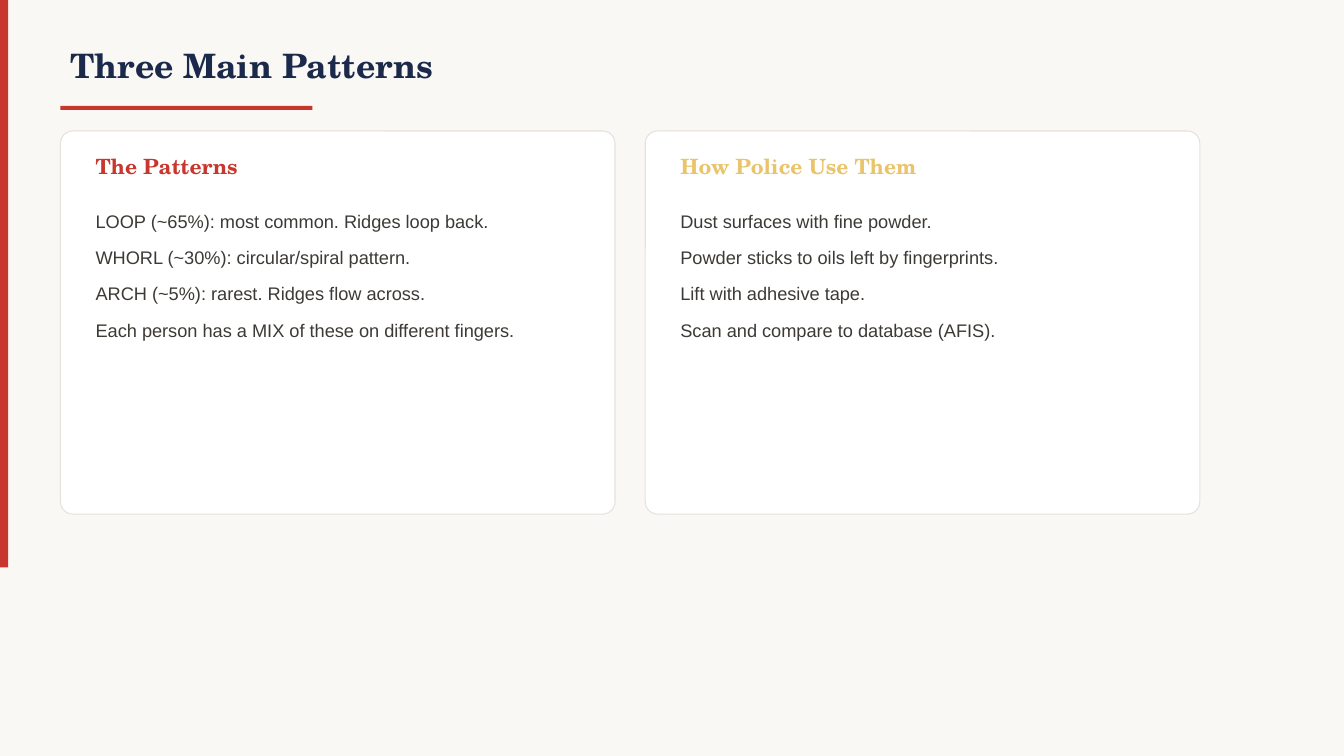
import pptx
import pptx.util
import pptx.dml.color
import pptx.enum.shapes
import pptx.enum.text

Inches = pptx.util.Inches
Pt = pptx.util.Pt
SHAPE = pptx.enum.shapes.MSO_SHAPE
ANCHOR = pptx.enum.text.MSO_ANCHOR

HUES = {
    "page": "FAF8F5",
    "red": "C8372D",
    "navy": "1B2A4A",
    "gold": "E9C46A",
    "card": "FFFFFF",
    "edge": "E5E2DC",
    "body": "3D3A36",
}


def hue(name):
    return pptx.dml.color.RGBColor.from_string(HUES[name])


def write(par, text, font="Arial", size=13, color="body", bold=False, lead=None, after=None):
    """Put formatted text into a paragraph."""
    run = par.add_run()
    run.text = text
    run.font.name = font
    run.font.size = Pt(size)
    run.font.bold = bold
    run.font.color.rgb = hue(color)
    if lead:
        par.line_spacing = lead
    if after:
        par.space_after = Pt(after)


class Deck:
    serif = "TeX Gyre Schola"

    def __init__(self, slide):
        self.slide = slide
        slide.background.fill.solid()
        slide.background.fill.fore_color.rgb = hue("page")

    def block(self, x, y, w, h, fill, kind=SHAPE.RECTANGLE):
        box = self.slide.shapes.add_shape(kind, Inches(x), Inches(y), Inches(w), Inches(h))
        box.shadow.inherit = False
        box.fill.solid()
        box.fill.fore_color.rgb = hue(fill)
        box.line.fill.background()
        return box

    def label(self, x, y, w, h, lines, anchor=ANCHOR.TOP, **style):
        box = self.slide.shapes.add_textbox(Inches(x), Inches(y), Inches(w), Inches(h))
        frame = box.text_frame
        frame.word_wrap = True
        frame.vertical_anchor = anchor
        for i, line in enumerate(lines):
            par = frame.add_paragraph() if i else frame.paragraphs[0]
            write(par, line, **style)

    def head(self, x, y, w, h, text, size, color):
        self.label(x, y, w, h, [text], ANCHOR.MIDDLE,
                   font=self.serif, size=size, color=color, bold=True)

    def card(self, x, y, title, color, lines):
        box = self.block(x, y, 5.5, 3.8, "card", SHAPE.ROUNDED_RECTANGLE)
        box.adjustments[0] = 0.032
        box.line.color.rgb = hue("edge")
        box.line.width = Pt(0.75)
        self.head(x + 0.25, y + 0.15, 5, 0.4, title, 15, color)
        self.label(x + 0.25, y + 0.65, 5, 2.9, lines, lead=1.4, after=4)


CARDS = [
    ("The Patterns", "red", [
        "LOOP (~65%): most common. Ridges loop back.",
        "WHORL (~30%): circular/spiral pattern.",
        "ARCH (~5%): rarest. Ridges flow across.",
        "Each person has a MIX of these on different fingers.",
    ]),
    ("How Police Use Them", "gold", [
        "Dust surfaces with fine powder.",
        "Powder sticks to oils left by fingerprints.",
        "Lift with adhesive tape.",
        "Scan and compare to database (AFIS).",
    ]),
]


def main():
    show = pptx.Presentation()
    show.slide_width = Inches(13.33)
    show.slide_height = Inches(7.5)
    deck = Deck(show.slides.add_slide(show.slide_layouts[6]))

    # Side bar, title and rule
    deck.block(0, 0, 0.08, 5.63, "red")
    deck.head(0.6, 0.3, 10, 0.7, "Three Main Patterns", 24, "navy")
    deck.block(0.6, 1.05, 2.5, 0.04, "red")

    # Two cards side by side
    for i, (title, color, lines) in enumerate(CARDS):
        deck.card(0.6 + i * 5.8, 1.3, title, color, lines)

    show.save("out.pptx")


if __name__ == "__main__":
    main()
